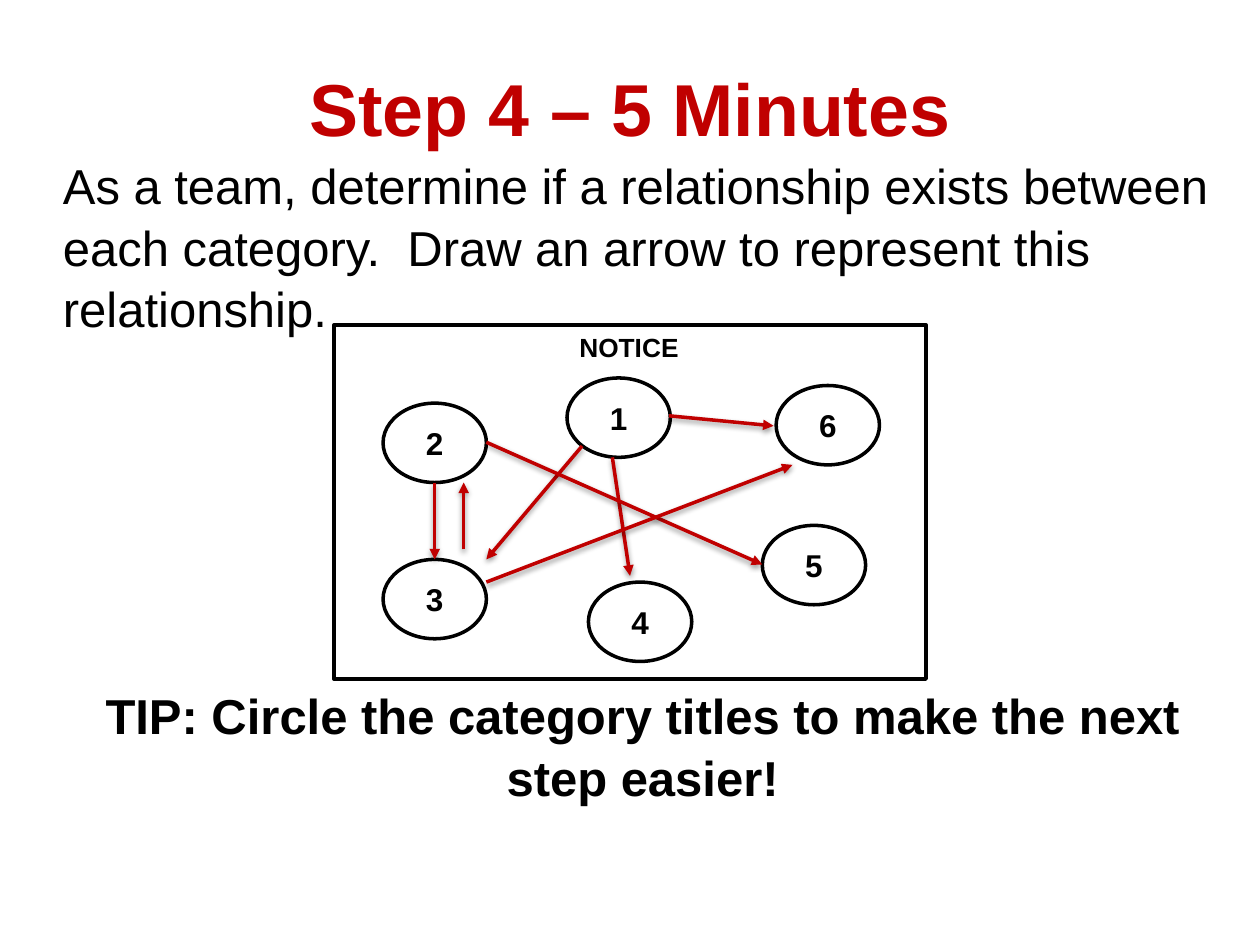
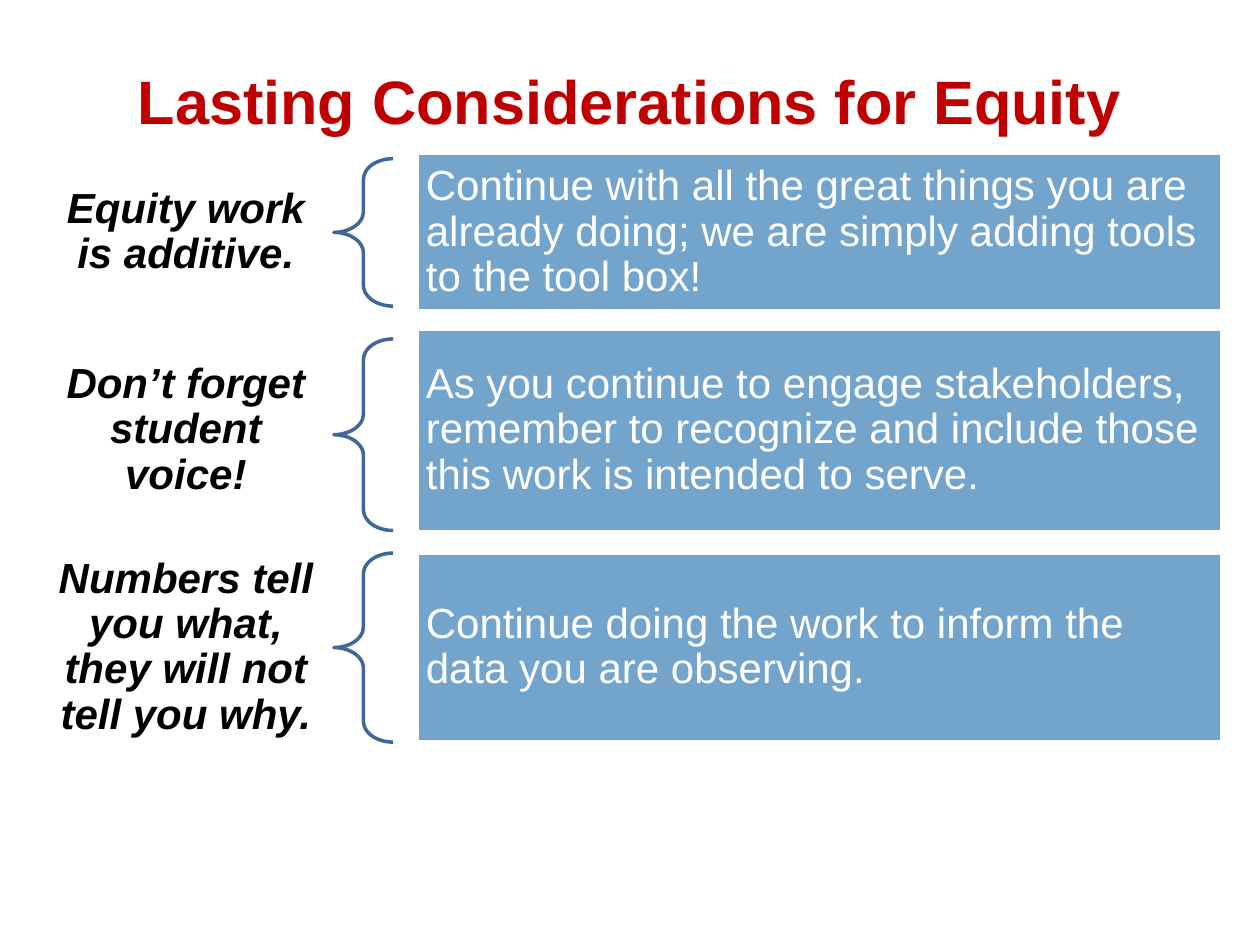
from lxml.etree import SubElement
from pptx import Presentation
from pptx.dml.color import RGBColor
from pptx.enum.shapes import MSO_CONNECTOR, MSO_SHAPE
from pptx.enum.text import MSO_ANCHOR, PP_ALIGN
from pptx.oxml import parse_xml
from pptx.oxml.ns import nsdecls, qn
from pptx.util import Inches, Pt

RED = RGBColor(0xC0, 0x00, 0x00)
BLACK = RGBColor(0x00, 0x00, 0x00)
WHITE = RGBColor(0xFF, 0xFF, 0xFF)
PANEL_BLUE = RGBColor(0x73, 0xA4, 0xCC)
BRACE_BLUE = RGBColor(0x3F, 0x67, 0x97)

COLUMNS, ROWS = 100, 75
BLANK_LAYOUT = 6
ARROW_SHADOW = (
    f'<a:effectLst {nsdecls("a")}>'
    '<a:outerShdw blurRad="40000" dist="20000" dir="5400000" rotWithShape="0">'
    '<a:srgbClr val="000000"><a:alpha val="38000"/></a:srgbClr>'
    '</a:outerShdw></a:effectLst>'
)


class Sketch:
    """Holds the shared style and the current slide; lengths are grid units."""

    font = "Arial"
    line_width = Pt(2)

    def __init__(self):
        self.deck = Presentation()
        self.deck.slide_width, self.deck.slide_height = Inches(10), Inches(7.5)
        self.page = None

    def new_page(self, title, size):
        self.page = self.deck.slides.add_slide(self.deck.slide_layouts[BLANK_LAYOUT])
        self.text(title, (5, 5, 90, size / 6), size, RED, bold=True,
                  align=PP_ALIGN.CENTER)

    def place(self, column, row):
        return (round(self.deck.slide_width * column / COLUMNS),
                round(self.deck.slide_height * row / ROWS))

    def area(self, box):
        return (*self.place(*box[:2]), *self.place(*box[2:]))

    def set_words(self, shape, words, size, color, bold=False, italic=False,
                  align=PP_ALIGN.LEFT, anchor=MSO_ANCHOR.TOP, inset=(0, 0),
                  spacing=1.0):
        frame = shape.text_frame
        frame.word_wrap = True
        frame.vertical_anchor = anchor
        frame.margin_left = frame.margin_right = Inches(inset[0])
        frame.margin_top = frame.margin_bottom = Inches(inset[1])
        para = frame.paragraphs[0]
        para.alignment = align
        para.line_spacing = spacing
        span = para.add_run()
        span.text = words
        span.font.name, span.font.size = self.font, Pt(size)
        span.font.bold, span.font.italic = bold, italic
        span.font.color.rgb = color

    def text(self, words, box, size, color=BLACK, **style):
        self.set_words(self.page.shapes.add_textbox(*self.area(box)),
                       words, size, color, **style)

    def shape(self, kind, box, line, fill=None):
        shape = self.page.shapes.add_shape(kind, *self.area(box))
        shape.shadow.inherit = False
        shape.line.color.rgb, shape.line.width = line, self.line_width
        if fill is None:
            shape.fill.background()
        else:
            shape.fill.solid()
            shape.fill.fore_color.rgb = fill
        return shape

    def arrow(self, start, end):
        arrow = self.page.shapes.add_connector(
            MSO_CONNECTOR.STRAIGHT, *self.place(*start), *self.place(*end))
        arrow.line.color.rgb, arrow.line.width = RED, self.line_width
        properties = arrow.element.spPr
        SubElement(properties.get_or_add_ln(), qn("a:tailEnd"), type="triangle")
        properties.append(parse_xml(ARROW_SHADOW))


def relationship_page(sketch):
    sketch.new_page("Step 4 – 5 Minutes", 42)
    sketch.text("As a team, determine if a relationship exists between each category.  "
                "Draw an arrow to represent this relationship.",
                (5, 12.1, 92, 14), 28, spacing=1.05)
    sketch.text("TIP: Circle the category titles to make the next step easier!",
                (5, 54.2, 92, 9.5), 28, bold=True, align=PP_ALIGN.CENTER, spacing=1.05)

    # Notice board with its numbered categories
    sketch.shape(MSO_SHAPE.RECTANGLE, (26.5, 25.8, 47, 28.1), BLACK, WHITE)
    sketch.text("NOTICE", (45, 25.8, 10.1, 3.5), 15, bold=True, inset=(0.1, 0.05))
    categories = {"2": (30.4, 32), "3": (30.4, 44.4), "4": (46.7, 46.2),
                  "5": (60.5, 41.7), "6": (61.6, 30.6), "1": (45, 30)}
    for number, corner in categories.items():
        circle = sketch.shape(MSO_SHAPE.OVAL, (*corner, 8.2, 6.3), BLACK, WHITE)
        sketch.set_words(circle, number, 18, BLACK, bold=True,
                         align=PP_ALIGN.CENTER, anchor=MSO_ANCHOR.MIDDLE)

    # Relationships
    relationships = [
        ((46.2, 35.4), (38.6, 44.4)),  # 1 to 3
        ((48.6, 36.3), (50, 45.7)),    # 1 to 4
        ((53.1, 33), (61.4, 33.8)),    # 1 to 6
        ((34.5, 38.3), (34.5, 44.4)),  # 2 to 3
        ((38.6, 35.1), (60.5, 44.8)),  # 2 to 5
        ((36.8, 43.6), (36.8, 38.3)),  # 3 to 2
        ((38.6, 46.2), (62.9, 36.9)),  # 3 to 6
    ]
    for start, end in relationships:
        sketch.arrow(start, end)


def equity_page(sketch):
    sketch.new_page("Lasting Considerations for Equity", 35)
    # Label, advice, then top and height of the panel and of the brace
    considerations = [
        ("Equity work is additive.",
         "Continue with all the great things you are already doing; "
         "we are simply adding tools to the tool box!",
         (12.2, 12.5), (12.6, 11.7)),
        ("Don’t forget student voice!",
         "As you continue to engage stakeholders, remember to recognize "
         "and include those this work is intended to serve.",
         (26.1, 16.1), (26.9, 15.2)),
        ("Numbers tell you what, they will not tell you why.",
         "Continue doing the work to inform the data you are observing.",
         (43.9, 15), (43.9, 15)),
    ]
    shared = {"anchor": MSO_ANCHOR.MIDDLE, "spacing": 0.9}
    for label, advice, (top, height), (brace_top, brace_height) in considerations:
        sketch.text(label, (3, top, 23.5, height), 24, bold=True, italic=True,
                    align=PP_ALIGN.CENTER, inset=(0.14, 0.05), **shared)
        brace = sketch.shape(MSO_SHAPE.LEFT_BRACE,
                             (26.5, brace_top, 4.7, brace_height), BRACE_BLUE)
        brace.adjustments[0] = 0.35
        panel = sketch.shape(MSO_SHAPE.RECTANGLE, (33.1, top, 63.9, height),
                             WHITE, PANEL_BLUE)
        sketch.set_words(panel, advice, 24, WHITE, inset=(0.07, 0.07), **shared)


def main():
    sketch = Sketch()
    relationship_page(sketch)
    equity_page(sketch)
    sketch.deck.save("out.pptx")


if __name__ == "__main__":
    main()
